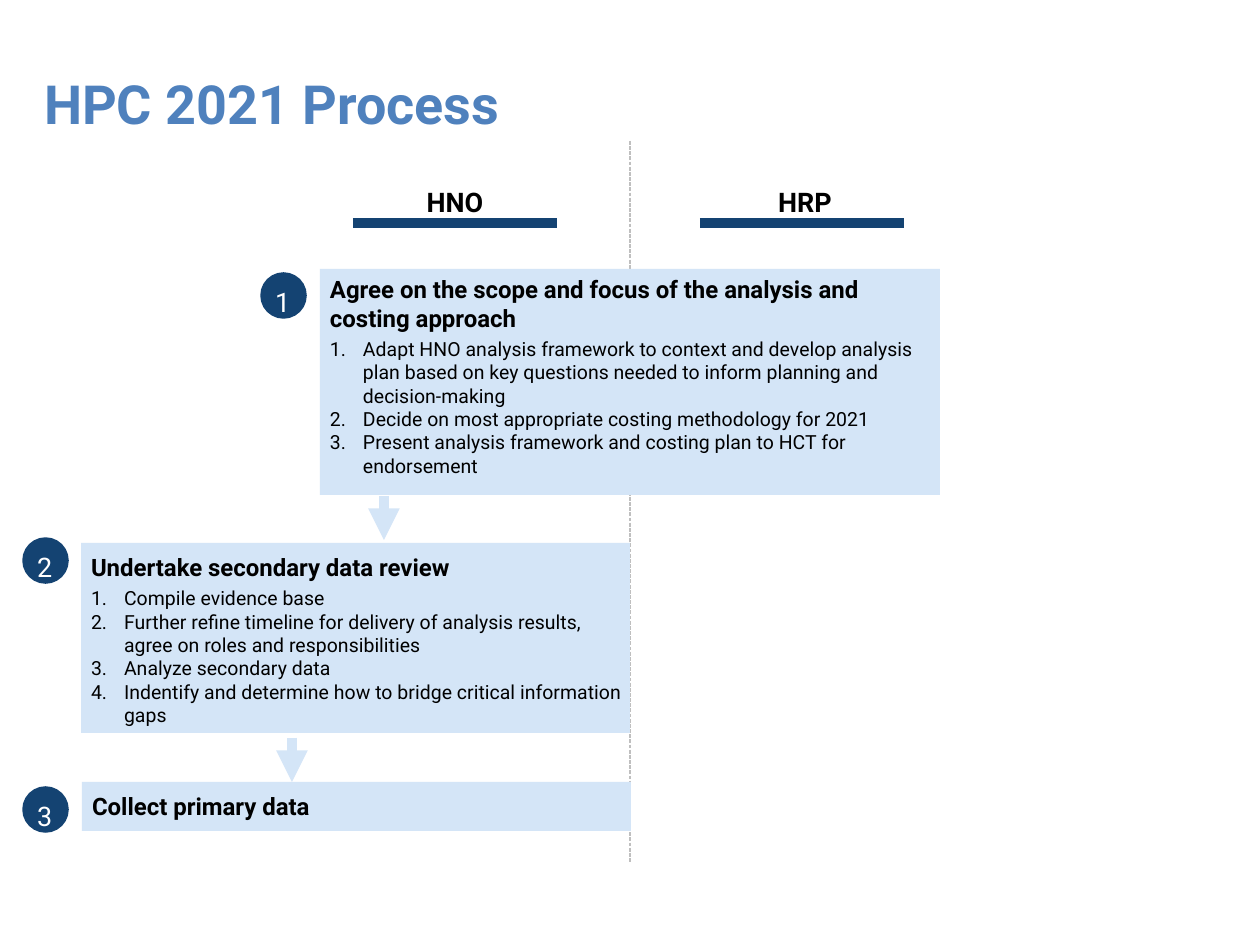
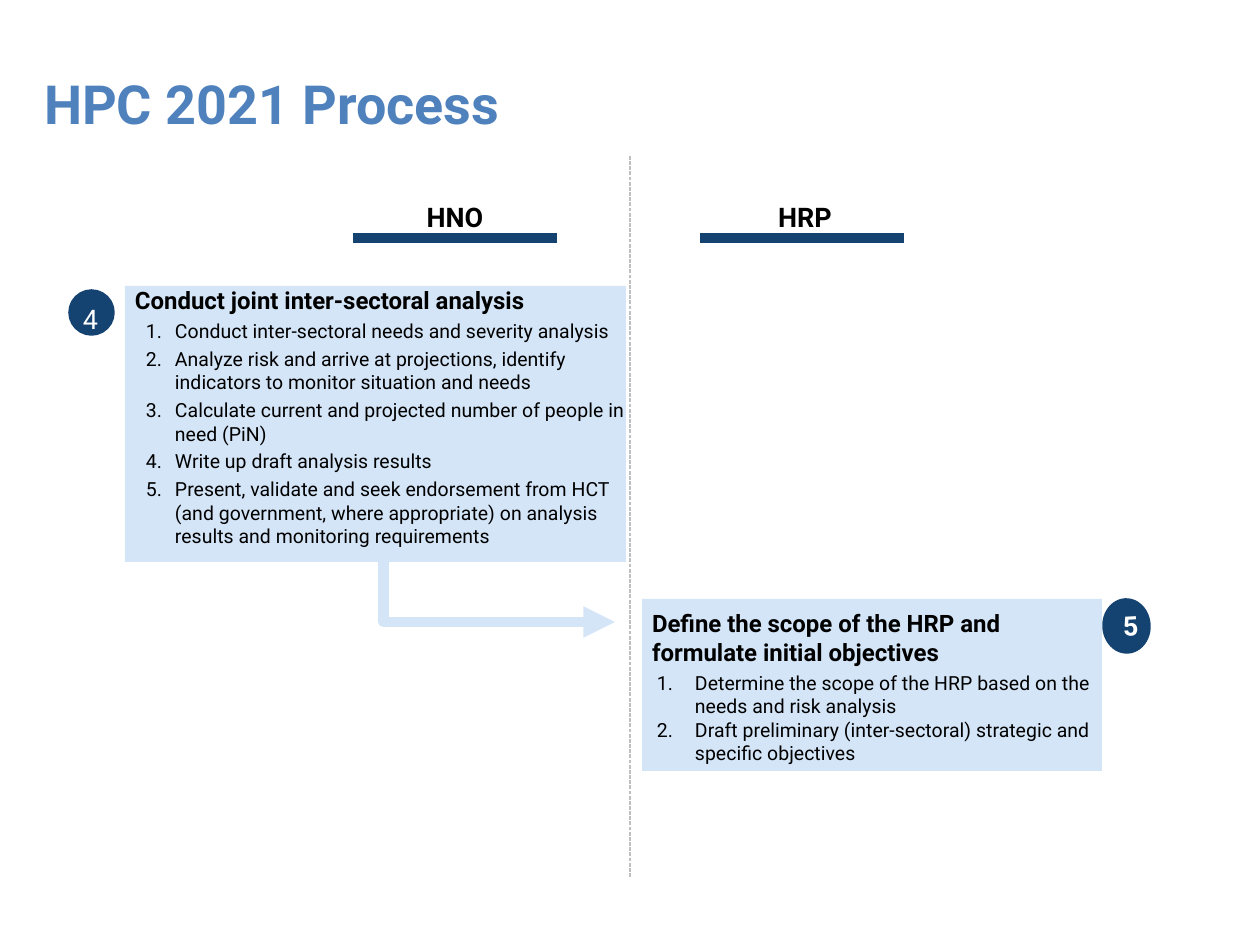
import lxml.etree
import pptx
import pptx.dml.color
import pptx.enum.dml
import pptx.enum.shapes
import pptx.enum.text
import pptx.oxml.ns
import pptx.util
from dataclasses import dataclass

EMU_PER_PX = 914400 / 126
SHAPE = pptx.enum.shapes.MSO_SHAPE
CONNECTOR = pptx.enum.shapes.MSO_CONNECTOR
ALIGN = pptx.enum.text.PP_ALIGN
ANCHOR = pptx.enum.text.MSO_ANCHOR


@dataclass(frozen=True)
class Theme:
    font: str = "Roboto"
    title: str = "4F81BD"
    navy: str = "144372"
    pale: str = "D4E5F7"
    grey: str = "BFBFBF"
    black: str = "000000"
    white: str = "FFFFFF"
    title_size: float = 30.8
    label_size: float = 15.4
    heading_size: float = 13.7
    item_size: float = 11.1
    gap: float = 2.6
    thick: float = 6
    outline: float = 2
    hairline: float = 0.75


def px(n):
    return pptx.util.Emu(round(n * EMU_PER_PX))


def rgb(value):
    return pptx.dml.color.RGBColor.from_string(value)


def add_xml(parent, tag, **attrs):
    return lxml.etree.SubElement(parent, pptx.oxml.ns.qn(tag), attrs)


def set_all(obj, values):
    for name, value in values.items():
        setattr(obj, name, value)


class Deck:
    def __init__(self, theme):
        self.theme = theme
        self.prs = pptx.Presentation()
        set_all(self.prs, {"slide_width": px(1260), "slide_height": px(945)})
        self.slide = None

    def add_slide(self, title):
        """Start a slide and fill its title placeholder."""
        t = self.theme
        self.slide = self.prs.slides.add_slide(self.prs.slide_layouts[5])
        sp = self.slide.shapes.title
        set_all(sp, {"left": px(44), "top": px(71), "width": px(806), "height": px(55)})
        self.frame(sp, vertical_anchor=ANCHOR.TOP)
        self.add_text(sp.text_frame.paragraphs[0], title, t.title_size, t.title, True,
                      alignment=ALIGN.LEFT)

    def frame(self, sp, **options):
        values = {"margin_left": 0, "margin_top": 0, "margin_right": 0, "margin_bottom": 0,
                  "word_wrap": True, "auto_size": pptx.enum.text.MSO_AUTO_SIZE.NONE}
        set_all(sp.text_frame, values | options)

    def add_text(self, p, text, size, color, bold=False, **paragraph):
        set_all(p, paragraph)
        r = p.add_run()
        r.text = text
        set_all(r.font, {"name": self.theme.font, "size": pptx.util.Pt(size), "bold": bold})
        r.font.color.rgb = rgb(color)

    def label(self, shapes, box, text, color, bold, align, wrap=True):
        sp = shapes.add_textbox(*map(px, box))
        self.frame(sp, word_wrap=wrap)
        self.add_text(sp.text_frame.paragraphs[0], text, self.theme.label_size, color, bold,
                      alignment=align, line_spacing=1.5)

    def line(self, start, end, color, width, kind=CONNECTOR.STRAIGHT, dash=None, arrow=False):
        sp = self.slide.shapes.add_connector(kind, *map(px, start + end))
        sp.line.color.rgb = rgb(color)
        sp.line.width = pptx.util.Pt(width)
        if dash:
            sp.line.dash_style = dash
        spPr = sp._element.spPr
        if arrow:
            add_xml(spPr.find(pptx.oxml.ns.qn("a:ln")), "a:tailEnd", type="triangle")
        add_xml(spPr, "a:effectLst")

    def arrow(self, start, end, kind=CONNECTOR.STRAIGHT):
        self.line(start, end, self.theme.pale, self.theme.thick, kind, arrow=True)

    def shape(self, shapes, kind, box, fill, outline=None):
        sp = shapes.add_shape(kind, *map(px, box))
        sp.shadow.inherit = False
        sp.fill.solid()
        sp.fill.fore_color.rgb = rgb(fill)
        if outline:
            sp.line.color.rgb = rgb(outline)
            sp.line.width = pptx.util.Pt(self.theme.outline)
        else:
            sp.line.fill.background()
        return sp

    def columns(self, top):
        """Dashed divider with the two underlined column headings."""
        t = self.theme
        self.line((630, top), (630, top + 722), t.grey, t.hairline,
                  dash=pptx.enum.dml.MSO_LINE.SQUARE_DOT)
        for text, left, bar in (("HNO", 280, 353), ("HRP", 630, 700)):
            self.label(self.slide.shapes, (left, top + 28, 350, 43), text, t.black, True,
                       ALIGN.CENTER)
            self.line((bar, top + 82), (bar + 204, top + 82), t.navy, t.thick)

    def badge(self, left, top, number):
        """Numbered circle, grouped with its digit."""
        t = self.theme
        g = self.slide.shapes.add_group_shape()
        self.shape(g.shapes, SHAPE.OVAL, (left, top, 43, 43), t.navy, t.navy)
        self.label(g.shapes, (left + 13, top - 5, 17, 43), number, t.white, False,
                   ALIGN.LEFT, wrap=False)

    def tilted_badge(self, box, number):
        t = self.theme
        sp = self.shape(self.slide.shapes, SHAPE.OVAL, box, t.navy, t.navy)
        sp.rotation = 356.8
        self.frame(sp, margin_left=px(8), vertical_anchor=ANCHOR.MIDDLE)
        self.add_text(sp.text_frame.paragraphs[0], number, t.label_size, t.white, True,
                      alignment=ALIGN.CENTER)

    def step(self, box, heading, items=(), pad=10, indent=43, hang=33, gap=0):
        """Pale box with a bold heading and a numbered list."""
        t = self.theme
        sp = self.shape(self.slide.shapes, SHAPE.RECTANGLE, box, t.pale)
        self.frame(sp, margin_top=px(pad), vertical_anchor=ANCHOR.TOP)
        tf = sp.text_frame
        p = tf.paragraphs[0]
        p._p.get_or_add_pPr().set("marL", str(px(10)))
        self.add_text(p, heading, t.heading_size, t.black, True, alignment=ALIGN.LEFT,
                      space_after=pptx.util.Pt(t.gap))
        for item in items:
            p = tf.add_paragraph()
            pPr = p._p.get_or_add_pPr()
            for name, value in {"marL": indent, "indent": -hang}.items():
                pPr.set(name, str(px(value)))
            add_xml(pPr, "a:buFont", typeface="+mj-lt")
            add_xml(pPr, "a:buAutoNum", type="arabicPeriod")
            self.add_text(p, item, t.item_size, t.black, alignment=ALIGN.LEFT,
                          space_after=pptx.util.Pt(gap))


def main():
    theme = Theme()
    deck = Deck(theme)
    title = "HPC 2021 Process"

    # Steps 1 to 3
    deck.add_slide(title)
    deck.columns(141)
    deck.arrow((384, 496), (384, 540))
    deck.arrow((292, 738), (292, 782))
    deck.step((320, 269, 620, 226),
              "Agree on the scope and focus of the analysis and costing approach",
              ["Adapt HNO analysis framework to context and develop analysis plan based on "
               "key questions needed to inform planning and decision-making",
               "Decide on most appropriate costing methodology for 2021",
               "Present analysis framework and costing plan to HCT for endorsement"], pad=6)
    deck.step((81, 543, 549, 190), "Undertake secondary data review",
              ["Compile evidence base",
               "Further refine timeline for delivery of analysis results, agree on roles "
               "and responsibilities",
               "Analyze secondary data",
               "Indentify and determine how to bridge critical information gaps"])
    deck.step((82, 782, 549, 49), "Collect primary data")
    for left, top, number in ((262, 274, "1"), (24, 539, "2"), (24, 788, "3")):
        deck.badge(left, top, number)

    # Steps 4 and 5
    deck.add_slide(title)
    deck.columns(156)
    deck.arrow((152, 554), (615, 622), CONNECTOR.ELBOW)
    deck.step((125, 286, 501, 276), "Conduct joint inter-sectoral analysis",
              ["Conduct inter-sectoral needs and severity analysis",
               "Analyze risk and arrive at projections, identify indicators to monitor "
               "situation and needs",
               "Calculate current and projected number of people in need (PiN)",
               "Write up draft analysis results",
               "Present, validate and seek endorsement from HCT (and government, where "
               "appropriate) on analysis results and monitoring requirements"],
              pad=0, indent=50, hang=29, gap=theme.gap)
    deck.badge(70, 291, "4")
    deck.step((642, 599, 460, 172),
              "Define the scope of the HRP and formulate initial objectives",
              ["Determine the scope of the HRP based on the needs and risk analysis",
               "Draft preliminary (inter-sectoral) strategic and specific objectives"],
              indent=53, hang=38)
    deck.tilted_badge((1104, 600, 45, 52), "5")

    deck.prs.save("out.pptx")


if __name__ == "__main__":
    main()
